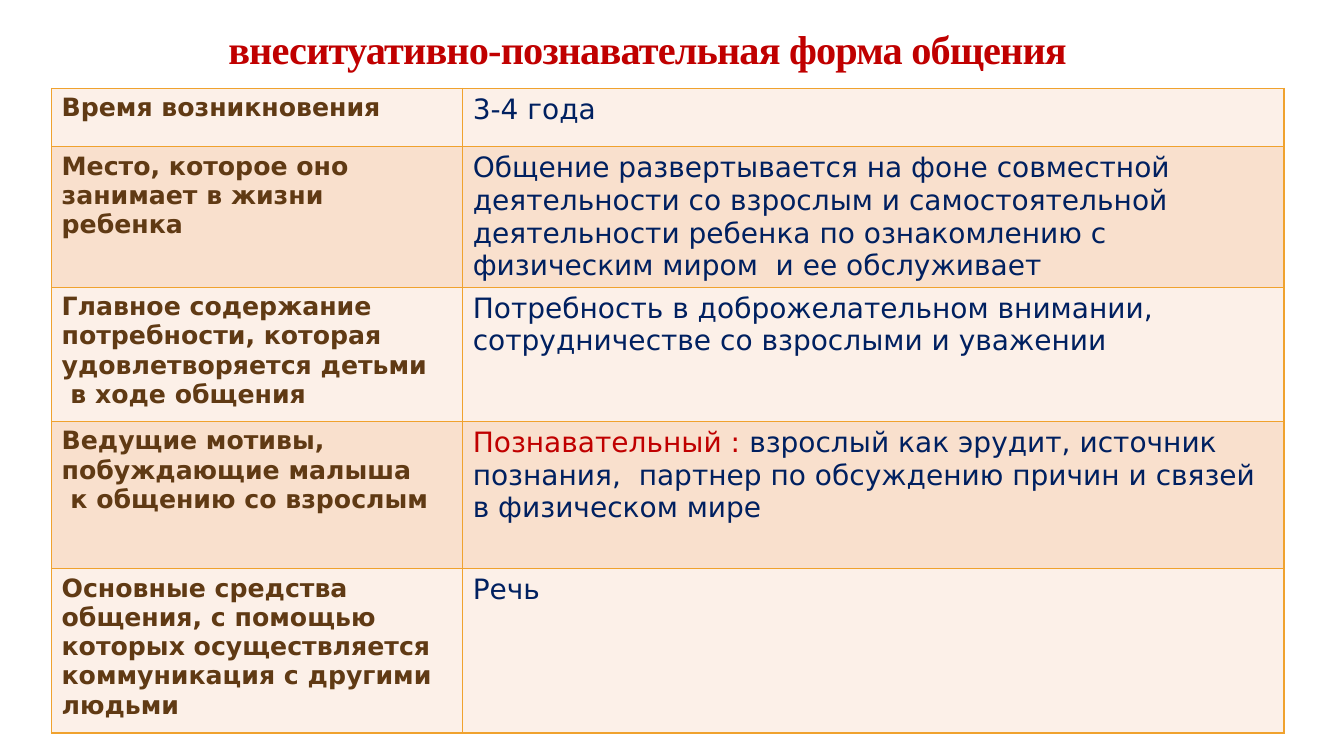
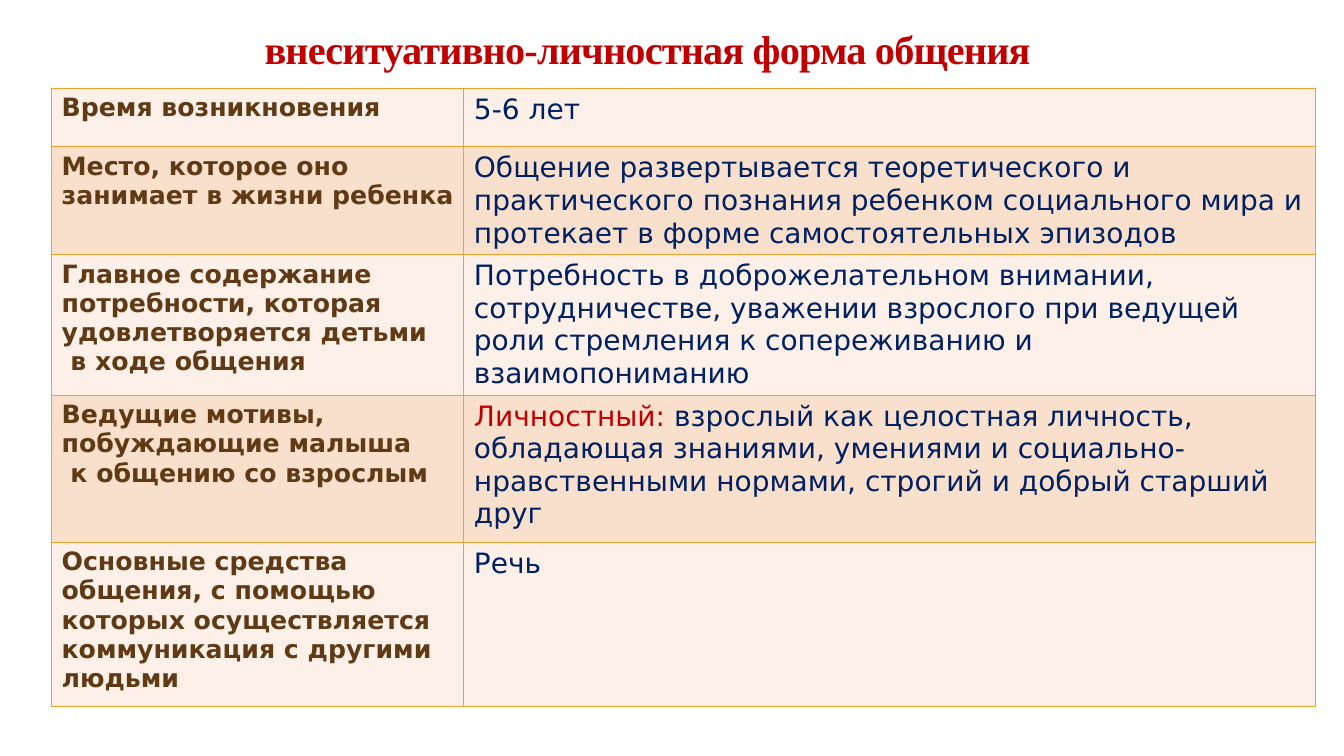
from dataclasses import dataclass

from lxml.etree import SubElement
from pptx import Presentation
from pptx.dml.color import RGBColor
from pptx.enum.text import MSO_ANCHOR, MSO_AUTO_SIZE, PP_ALIGN
from pptx.oxml.ns import qn
from pptx.slide import Slide
from pptx.table import _Cell as Cell
from pptx.util import Cm, Pt

RED = RGBColor(0xC0, 0x00, 0x00)
NAVY = RGBColor(0x00, 0x20, 0x60)
BROWN = RGBColor(0x60, 0x3A, 0x14)
BORDER = RGBColor(0xF0, 0xA2, 0x2E)
ROW_FILLS = (RGBColor(0xFC, 0xF0, 0xE8), RGBColor(0xF9, 0xE0, 0xCD))

TITLE_FONT = "Times New Roman"
TABLE_FONT = "DejaVu Sans"

TITLE_ONLY_LAYOUT = 5
TABLE_LEFT, TABLE_TOP = Cm(1.3), Cm(2.23)
ROW_HEIGHTS = (Cm(1.47), Cm(2.59), Cm(3.38), Cm(3.71), Cm(4.14))

ROW_LABELS = (
    ("Время возникновения",),
    ("Место, которое оно занимает в жизни ребенка",),
    ("Главное содержание потребности, которая удовлетворяется детьми", " в ходе общения"),
    ("Ведущие мотивы, побуждающие малыша", " к общению со взрослым"),
    ("Основные средства общения, с помощью которых осуществляется коммуникация с другими людьми",),
)


@dataclass(frozen=True)
class Answer:
    text: str
    motive: str = ""


@dataclass(frozen=True)
class CommunicationForm:
    title: str
    column_widths: tuple[Cm, Cm]
    answers: tuple[Answer, ...]


FORMS = (
    CommunicationForm(
        "внеситуативно-познавательная форма общения",
        (Cm(10.36), Cm(20.7)),
        (
            Answer("3-4 года"),
            Answer(
                "Общение развертывается на фоне совместной деятельности со взрослым и "
                "самостоятельной деятельности ребенка по ознакомлению с физическим миром  "
                "и ее обслуживает"
            ),
            Answer("Потребность в доброжелательном внимании, сотрудничестве со взрослыми и уважении"),
            Answer(
                "взрослый как эрудит, источник познания,  партнер по обсуждению "
                "причин и связей в физическом мире",
                motive="Познавательный : ",
            ),
            Answer("Речь"),
        ),
    ),
    CommunicationForm(
        "внеситуативно-личностная форма общения",
        (Cm(10.39), Cm(21.46)),
        (
            Answer("5-6 лет"),
            Answer(
                "Общение развертывается теоретического и практического познания ребенком "
                "социального мира и протекает в форме самостоятельных эпизодов"
            ),
            Answer(
                "Потребность в доброжелательном внимании, сотрудничестве, уважении взрослого "
                "при ведущей роли стремления к сопереживанию и взаимопониманию"
            ),
            Answer(
                "взрослый как целостная личность, обладающая знаниями, умениями и "
                "социально-нравственными нормами, строгий и добрый старший друг",
                motive="Личностный: ",
            ),
            Answer("Речь"),
        ),
    ),
)


def write_title(slide: Slide, text: str) -> None:
    title = slide.shapes.title
    title.left, title.top = Cm(1.93), Cm(0.58)
    title.width, title.height = Cm(28.78), Cm(1.42)
    frame = title.text_frame
    frame.word_wrap = True
    frame.auto_size = MSO_AUTO_SIZE.NONE
    frame.vertical_anchor = MSO_ANCHOR.MIDDLE
    paragraph = frame.paragraphs[0]
    paragraph.alignment = PP_ALIGN.CENTER
    paragraph.line_spacing = 0.9
    run = paragraph.add_run()
    run.text = text
    run._r.get_or_add_rPr().set("spc", "-60")
    font = paragraph.font
    font.name, font.size, font.bold = TITLE_FONT, Pt(28.8), True
    font.color.rgb = RED


def style_cell(cell: Cell, fill: RGBColor) -> None:
    properties = cell._tc.get_or_add_tcPr()
    for side in ("a:lnL", "a:lnR", "a:lnT", "a:lnB"):
        line = SubElement(properties, qn(side), w=str(Pt(1)))
        solid = SubElement(line, qn("a:solidFill"))
        SubElement(solid, qn("a:srgbClr"), val=str(BORDER))
    cell.fill.solid()
    cell.fill.fore_color.rgb = fill


def write_label(cell: Cell, lines: tuple[str, ...]) -> None:
    cell.text = "\n".join(lines)
    for paragraph in cell.text_frame.paragraphs:
        font = paragraph.font
        font.name, font.size, font.bold = TABLE_FONT, Pt(18), True
        font.color.rgb = BROWN


def write_answer(cell: Cell, answer: Answer) -> None:
    paragraph = cell.text_frame.paragraphs[0]
    font = paragraph.font
    font.name, font.size, font.bold = TABLE_FONT, Pt(20), False
    for text, color in ((answer.motive, RED), (answer.text, NAVY)):
        if text:
            run = paragraph.add_run()
            run.text = text
            run.font.color.rgb = color


def add_form_table(slide: Slide, form: CommunicationForm) -> None:
    table = slide.shapes.add_table(
        len(ROW_LABELS), 2, TABLE_LEFT, TABLE_TOP, sum(form.column_widths), sum(ROW_HEIGHTS)
    ).table
    table.first_row = table.horz_banding = False
    for column, width in zip(table.columns, form.column_widths):
        column.width = width
    for index, (label, answer) in enumerate(zip(ROW_LABELS, form.answers)):
        row = table.rows[index]
        row.height = ROW_HEIGHTS[index]
        label_cell, answer_cell = row.cells
        for cell in (label_cell, answer_cell):
            style_cell(cell, ROW_FILLS[index % 2])
        write_label(label_cell, label)
        write_answer(answer_cell, answer)


def main() -> None:
    presentation = Presentation()
    presentation.slide_width, presentation.slide_height = Cm(33.87), Cm(19.05)
    layout = presentation.slide_layouts[TITLE_ONLY_LAYOUT]
    for form in FORMS:
        slide = presentation.slides.add_slide(layout)
        write_title(slide, form.title)
        add_form_table(slide, form)
    presentation.save("out.pptx")


if __name__ == "__main__":
    main()
